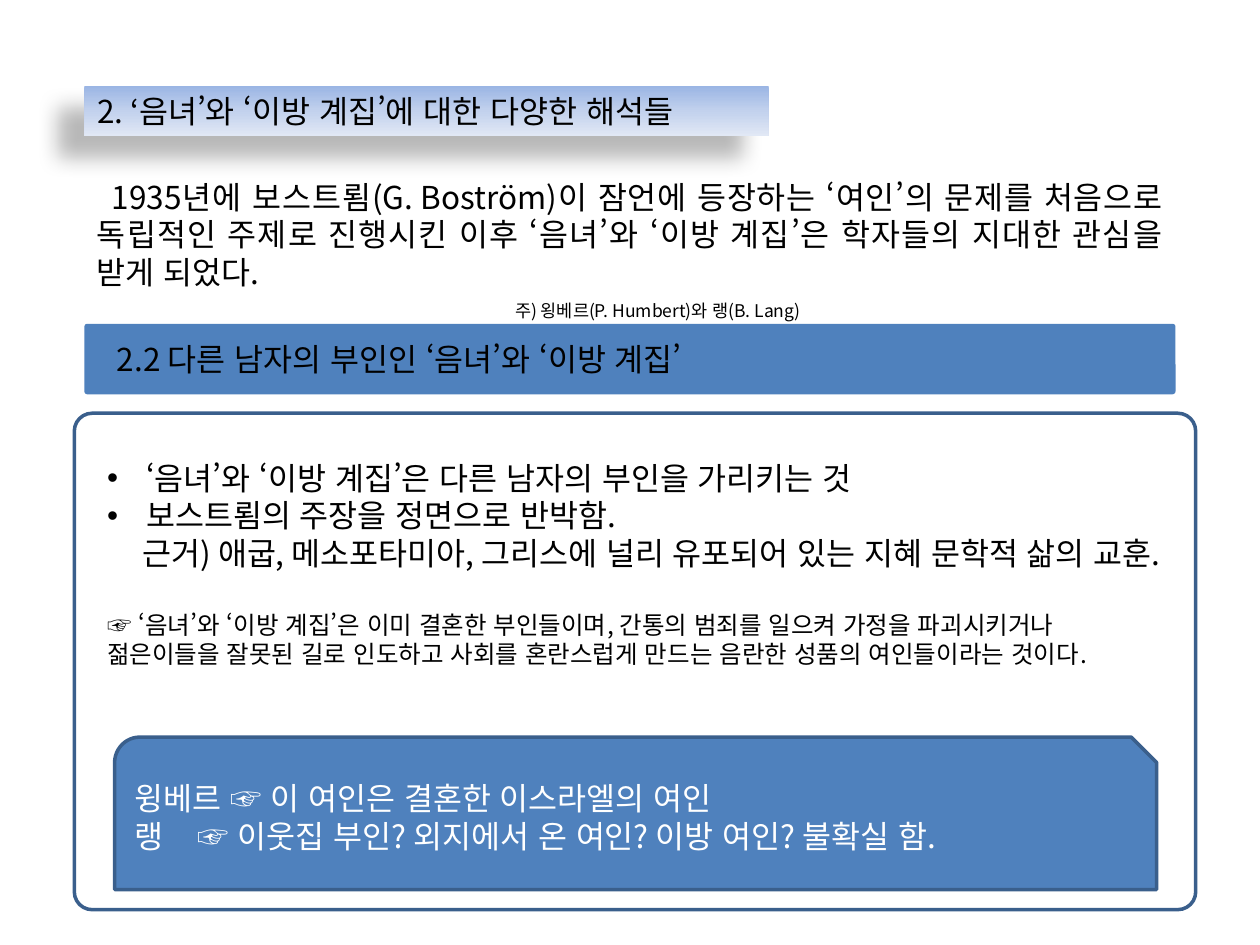
from copy import deepcopy

from lxml.etree import SubElement
from pptx import Presentation
from pptx.dml.color import RGBColor
from pptx.enum.lang import MSO_LANGUAGE_ID as Language
from pptx.enum.shapes import MSO_SHAPE as Shape
from pptx.enum.text import MSO_ANCHOR as Anchor, MSO_AUTO_SIZE as AutoSize, PP_ALIGN as Align
from pptx.oxml.ns import qn
from pptx.util import Inches, Pt

FONT = "Noto Sans CJK KR"
BLACK, WHITE, BLUE, EDGE = "000000", "FFFFFF", "4F81BD", "3A5F8C"
GRADIENT = [(0, "9AB5E4"), (0.5, "C2D1ED"), (1, "E1E8F5")]
LEFT, WIDTH = 0.67, 8.66

# Paragraphs: text, then options that differ from the defaults of write().
TITLE = [("2. ‘음녀’와 ‘이방 계집’에 대한 다양한 해석들", {})]
INTRO = [("1935년에 보스트룀(G. Boström)이 잠언에 등장하는 ‘여인’의 문제를 처음으로 "
          "독립적인 주제로 진행시킨 이후 ‘음녀’와 ‘이방 계집’은 학자들의 지대한 관심을 "
          "받게 되었다.", {"first": 0.12, "align": Align.JUSTIFY})]
NOTE = [("주) 욍베르(P. Humbert)와 랭(B. Lang)", {"size": 10})]
HEADING = [("2.2 다른 남자의 부인인 ‘음녀’와 ‘이방 계집’", {})]
POINTS = [
    ("‘음녀’와 ‘이방 계집’은 다른 남자의 부인을 가리키는 것", {"bullet": True}),
    ("보스트룀의 주장을 정면으로 반박함.", {"bullet": True}),
    ("근거) 애굽, 메소포타미아, 그리스에 널리 유포되어 있는 지혜 문학적 삶의 교훈.",
     {"first": 0.28}),
    ("☞ ‘음녀’와 ‘이방 계집’은 이미 결혼한 부인들이며, 간통의 범죄를 일으켜 가정을 "
     "파괴시키거나 젊은이들을 잘못된 길로 인도하고 사회를 혼란스럽게 만드는 음란한 "
     "성품의 여인들이라는 것이다.", {"size": 14, "before": 21.5}),
]
SCHOLARS = [
    ("윙베르 ☞ 이 여인은 결혼한 이스라엘의 여인", {"color": WHITE}),
    ("랭\t☞ 이웃집 부인? 외지에서 온 여인? 이방 여인? 불확실 함.",
     {"color": WHITE, "tab": 0.85}),
]


def rgb(value):
    return RGBColor.from_string(value)


def place(shape, left, top, width, height):
    shape.left, shape.top = Inches(left), Inches(top)
    shape.width, shape.height = Inches(width), Inches(height)


def write(shape, content, anchor=Anchor.TOP):
    frame = shape.text_frame
    frame.word_wrap, frame.auto_size = True, AutoSize.NONE
    frame.vertical_anchor = anchor
    for number, (text, options) in enumerate(content):
        para = frame.paragraphs[0] if number == 0 else frame.add_paragraph()
        span = para.add_run()
        span.text = text
        span.font.language_id = Language.KOREAN
        para.alignment = options.get("align", Align.LEFT)
        para.space_before = Pt(options.get("before", 0))
        bullet = options.get("bullet", False)
        margin, first = (0.31, -0.31) if bullet else (0, options.get("first", 0))
        props = para._p.get_or_add_pPr()
        props.set("marL", str(Inches(margin)))
        props.set("indent", str(Inches(first)))
        if bullet:
            SubElement(props, qn("a:buFont"), typeface="Arial")
            SubElement(props, qn("a:buChar"), char="•")
        else:
            SubElement(props, qn("a:buNone"))
        if "tab" in options:
            tabs = SubElement(props, qn("a:tabLst"))
            SubElement(tabs, qn("a:tab"), pos=str(Inches(options["tab"])), algn="l")
        font = para.font
        font.name, font.size = FONT, Pt(options.get("size", 18))
        font.color.rgb = rgb(options.get("color", BLACK))
        SubElement(props.find(qn("a:defRPr")), qn("a:ea"), typeface=FONT)


def add_text(slide, content, *area):
    box = slide.shapes.add_textbox(*map(Inches, area))
    write(box, content)


def add_panel(slide, kind, area, fill=None, line=None, corner=None):
    panel = slide.shapes.add_shape(kind, *map(Inches, area))
    panel.shadow.inherit = False
    if corner is not None:
        panel.adjustments[0] = corner
    if fill:
        panel.fill.solid()
        panel.fill.fore_color.rgb = rgb(fill)
    else:
        panel.fill.background()
    if line:
        panel.line.color.rgb = rgb(line)
        panel.line.width = Pt(2)
    else:
        panel.line.fill.background()
    return panel


def style_title(title):
    """Give the title a three-stop vertical gradient and a soft shadow."""
    title.fill.gradient()
    title.fill.gradient_angle = 270
    props = title._element.spPr
    stop_list = props.find(qn("a:gradFill")).find(qn("a:gsLst"))
    stop_list.insert(1, deepcopy(stop_list[0]))
    for stop, (position, color) in zip(title.fill.gradient_stops, GRADIENT):
        stop.position = position
        stop.color.rgb = rgb(color)
    effects = SubElement(props, qn("a:effectLst"))
    shadow = SubElement(effects, qn("a:outerShdw"), blurRad=str(Pt(11.8)),
                        dist=str(Pt(19.7)), dir=str(141 * 60000),
                        algn="ctr", rotWithShape="0")
    color = SubElement(shadow, qn("a:srgbClr"), val=BLACK)
    SubElement(color, qn("a:alpha"), val="28000")


def main():
    deck = Presentation()
    deck.slide_width, deck.slide_height = Inches(10), Inches(7.5)
    slide = deck.slides.add_slide(deck.slide_layouts[1])
    title, body = slide.placeholders

    place(title, LEFT, 0.68, 5.43, 0.4)
    style_title(title)
    write(title, TITLE)
    place(body, 0.75, 3.59, 8.58, 2.32)
    write(body, POINTS)

    add_text(slide, INTRO, LEFT, 1.36, WIDTH, 1.01)
    add_panel(slide, Shape.ROUNDED_RECTANGLE, (0.59, 3.28, 8.9, 3.94),
              line=EDGE, corner=0.036)
    scholars = add_panel(slide, Shape.SNIP_ROUND_RECTANGLE, (0.91, 5.85, 8.27, 1.21),
                         fill=BLUE, line=EDGE)
    write(scholars, SCHOLARS, Anchor.MIDDLE)
    add_panel(slide, Shape.ROUNDED_RECTANGLE, (LEFT, 2.57, WIDTH, 0.56),
              fill=BLUE, corner=0.041)
    add_text(slide, HEADING, 0.83, 2.65, 8.11, 0.4)
    add_text(slide, NOTE, 3.99, 2.33, 5.82, 0.27)
    deck.save("out.pptx")


if __name__ == "__main__":
    main()
